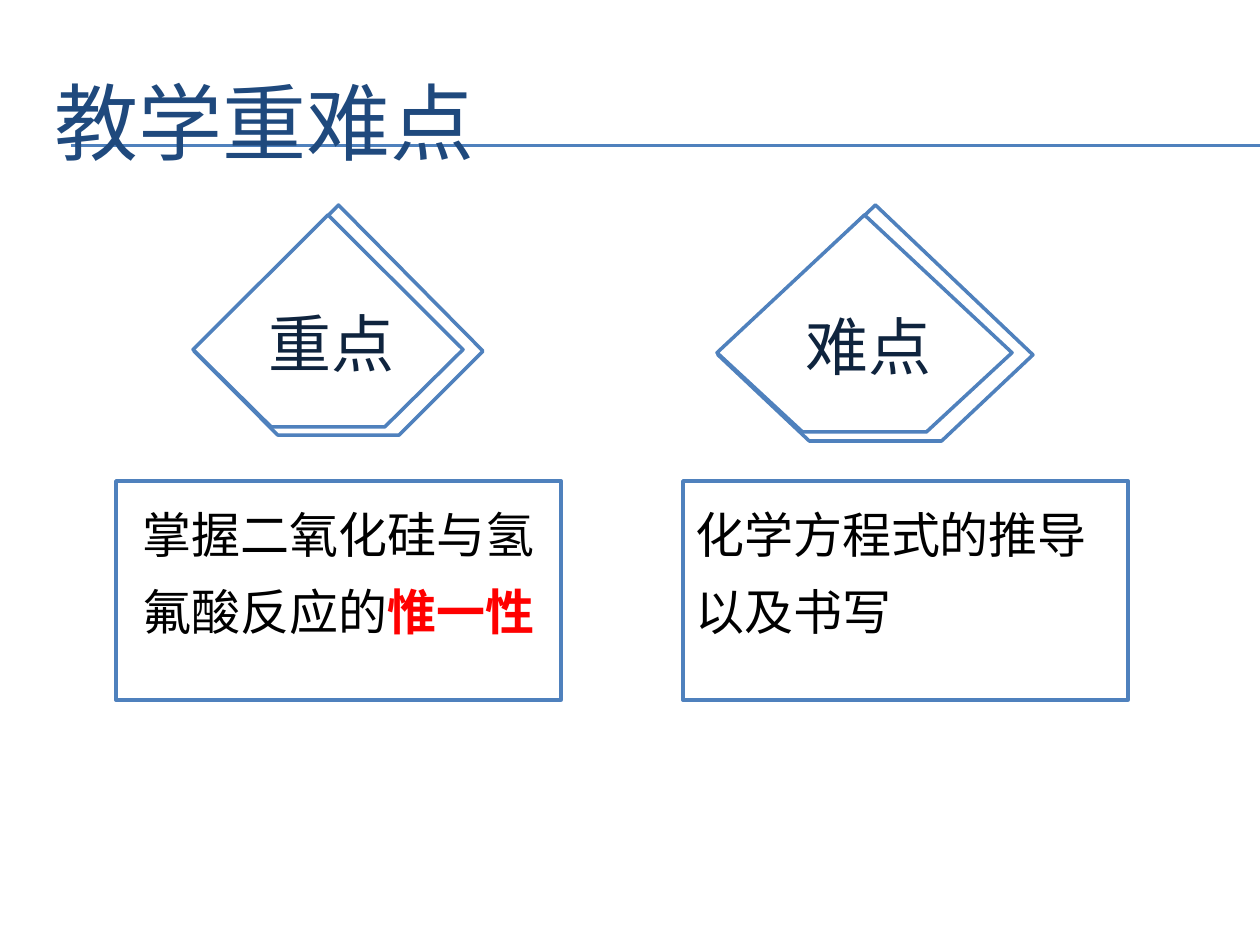
from dataclasses import dataclass

from lxml.etree import SubElement
from pptx import Presentation
from pptx.dml.color import RGBColor as RGB
from pptx.enum.shapes import MSO_CONNECTOR as CONN, MSO_SHAPE as SHAPE
from pptx.enum.text import MSO_ANCHOR as ANCHOR, PP_ALIGN as ALIGN
from pptx.oxml.ns import qn
from pptx.util import Pt

PX = 914400 / 126


def px(n):
    return round(n * PX)


@dataclass(frozen=True)
class Theme:
    title: RGB = RGB(0x1F, 0x49, 0x7D)
    accent: RGB = RGB(0x4F, 0x81, 0xBD)
    label: RGB = RGB(0x0F, 0x24, 0x3E)
    body: RGB = RGB(0, 0, 0)
    strong: RGB = RGB(0xFF, 0, 0)
    paper: RGB = RGB(0xFF, 0xFF, 0xFF)
    title_font: str = "Lato"
    font: str = "Arial"
    title_size: int = 48
    label_size: int = 36
    body_size: int = 28
    outline: float = 2
    rule: float = 0.75


class Deck:
    def __init__(self, prs, theme):
        self.theme = theme
        self.s = prs.slides.add_slide(prs.slide_layouts[6])

    def style(self, r, size, color, font=None):
        r.font.name = font or self.theme.font
        r.font.size = Pt(size)
        r.font.color.rgb = color

    def paint(self, sp):
        sp.shadow.inherit = False
        sp.fill.solid()
        sp.fill.fore_color.rgb = self.theme.paper
        sp.line.color.rgb = self.theme.accent
        sp.line.width = Pt(self.theme.outline)

    def rule(self, x1, x2, y):
        c = self.s.shapes.add_connector(CONN.STRAIGHT, px(x1), px(y), px(x2), px(y))
        c.line.color.rgb = self.theme.accent
        c.line.width = Pt(self.theme.rule)
        SubElement(c._element.spPr, qn("a:effectLst"))

    def title(self, text, x, y, w, h):
        tf = self.s.shapes.add_textbox(px(x), px(y), px(w), px(h)).text_frame
        tf.word_wrap = True
        tf.vertical_anchor = ANCHOR.MIDDLE
        tf.text = text
        t = self.theme
        self.style(tf.paragraphs[0].runs[0], t.title_size, t.title, t.title_font)

    def gem(self, x, y, w, h, text=None):
        outline = [(0.5, 0), (1, 0.635), (0.71, 1), (0.29, 1), (0, 0.635)]
        pts = [(px(x + w * u), px(y + h * v)) for u, v in outline]
        fb = self.s.shapes.build_freeform(*pts[0])
        fb.add_line_segments(pts[1:], close=True)
        sp = fb.convert_to_shape()
        self.paint(sp)
        if text:
            tf = sp.text_frame
            tf.word_wrap = True
            tf.vertical_anchor = ANCHOR.MIDDLE
            tf.margin_left, tf.margin_top = px(20), px(49)
            tf.margin_right, tf.margin_bottom = px(13), px(6)
            tf.text = text
            p = tf.paragraphs[0]
            p.alignment = ALIGN.CENTER
            self.style(p.runs[0], self.theme.label_size, self.theme.label)

    def card(self, x, y, w, h, text, strong, align):
        sp = self.s.shapes.add_shape(SHAPE.RECTANGLE, px(x), px(y), px(w), px(h))
        self.paint(sp)
        tf = sp.text_frame
        tf.word_wrap = True
        tf.vertical_anchor = ANCHOR.TOP
        tf.text = text
        p = tf.paragraphs[0]
        p.alignment = align
        p.line_spacing = 1.3
        self.style(p.runs[0], self.theme.body_size, self.theme.body)
        if strong:
            r = p.add_run()
            r.text = strong
            self.style(r, self.theme.body_size, self.theme.strong)
            r.font.bold = True


def main():
    prs = Presentation()
    prs.slide_width, prs.slide_height = px(1260), px(945)
    deck = Deck(prs, Theme())
    for y in (145, 146):
        deck.rule(71, 1260, y)
    deck.title("教学重难点", 42, 63, 1197, 116)
    topics = [
        ("重点", (194, 289, 230), (193, 270, 212),
         116, "掌握二氧化硅与氢氟酸反应的", "惟一性", ALIGN.CENTER),
        ("难点", (718, 315, 236), (717, 295, 217),
         683, "化学方程式的推导以及书写", None, ALIGN.LEFT),
    ]
    for label, (bx, bw, bh), (fx, fw, fh), x, text, strong, align in topics:
        deck.gem(bx, 205, bw, bh)
        deck.gem(fx, 215, fw, fh, label)
        deck.card(x, 481, 445, 219, text, strong, align)
    prs.save("out.pptx")


if __name__ == "__main__":
    main()
